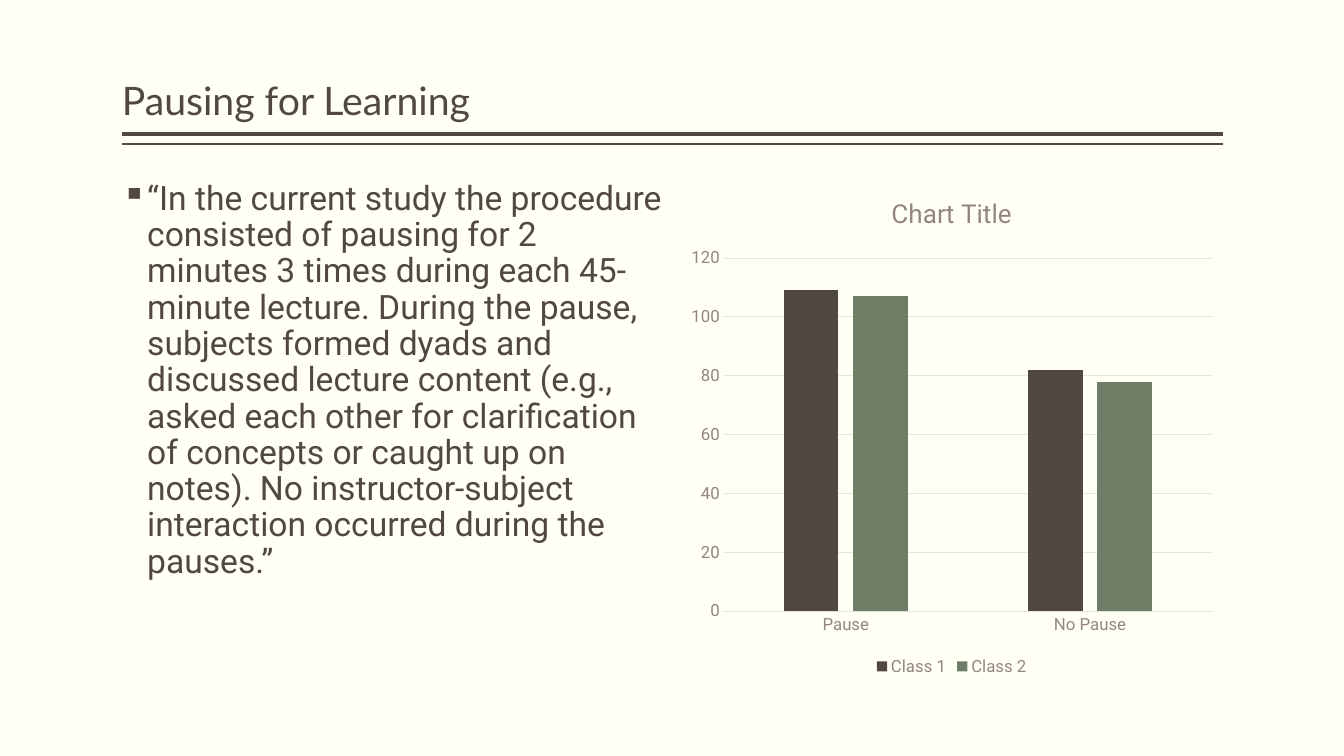
from lxml import etree
from pptx import Presentation
from pptx.chart.data import CategoryChartData
from pptx.dml.color import RGBColor
from pptx.enum.chart import XL_CHART_TYPE, XL_LEGEND_POSITION, XL_TICK_MARK
from pptx.enum.shapes import MSO_CONNECTOR
from pptx.enum.text import MSO_ANCHOR
from pptx.oxml.ns import qn
from pptx.util import Inches, Pt

COLUMNS = XL_CHART_TYPE.COLUMN_CLUSTERED
LEGEND_BOTTOM = XL_LEGEND_POSITION.BOTTOM
NO_TICK = XL_TICK_MARK.NONE
STRAIGHT = MSO_CONNECTOR.STRAIGHT
TOP, BOTTOM = MSO_ANCHOR.TOP, MSO_ANCHOR.BOTTOM

IVORY = RGBColor(0xFF, 0xFF, 0xF3)
BROWN = RGBColor(0x51, 0x48, 0x43)
GREEN = RGBColor(0x6D, 0x7D, 0x66)
TAUPE = RGBColor(0x94, 0x86, 0x7E)
PALE = RGBColor(0xE6, 0xE3, 0xE1)

# Content
TITLE = "Pausing for Learning"
QUOTE = (
    "“In the current study the procedure consisted of pausing for 2 minutes "
    "3 times during each 45-minute lecture. During the pause, subjects formed "
    "dyads and discussed lecture content (e.g., asked each other for "
    "clarification of concepts or caught up on notes). No instructor-subject "
    "interaction occurred during the pauses.”"
)
CHART_TITLE = "Chart Title"
CATEGORIES = ["Pause", "No Pause"]
SERIES = [("Class 1", (109, 82), BROWN), ("Class 2", (107, 78), GREEN)]
RULES = [(1.33, 3), (1.43, 1)]  # height on the page, line width

# Layout
LEFT, RIGHT = 1.21, 12.13
BODY_TOP, BODY_HEIGHT, COLUMN_WIDTH = 1.75, 5, 5.38


def set_font(font, name, size, color):
    font.name, font.size, font.bold = name, Pt(size), False
    font.color.rgb = color


def add_text(page, text, left, top, width, height, anchor, name, size):
    box = page.shapes.add_textbox(
        Inches(left), Inches(top), Inches(width), Inches(height))
    frame = box.text_frame
    frame.word_wrap = True
    frame.vertical_anchor = anchor
    frame.margin_left = frame.margin_right = 0
    frame.margin_top = frame.margin_bottom = Inches(0.05)
    para = frame.paragraphs[0]
    para.text = text
    para.line_spacing = 0.9
    set_font(para.font, name, size, BROWN)
    return para


def add_bullet(para, symbol, indent):
    properties = para._p.get_or_add_pPr()
    properties.set("marL", str(Inches(indent)))
    properties.set("indent", str(-Inches(indent)))
    bullet = etree.Element(qn("a:buChar"), char=symbol)
    properties.find(qn("a:defRPr")).addprevious(bullet)


def style_line(line, color, width):
    line.color.rgb = color
    line.width = Pt(width)


def add_pause_chart(page):
    data = CategoryChartData()
    data.categories = CATEGORIES
    for name, values, _ in SERIES:
        data.add_series(name, values)
    chart = page.shapes.add_chart(
        COLUMNS, Inches(RIGHT - COLUMN_WIDTH), Inches(BODY_TOP),
        Inches(COLUMN_WIDTH), Inches(BODY_HEIGHT), data).chart
    set_font(chart.font, "Roboto", 10, BROWN)

    chart.has_title = True
    heading = chart.chart_title.text_frame
    heading.text = CHART_TITLE
    set_font(heading.paragraphs[0].font, "Roboto", 18.6, TAUPE)
    chart.chart_title.include_in_layout = False

    chart.has_legend = True
    chart.legend.position = LEGEND_BOTTOM
    chart.legend.include_in_layout = False
    set_font(chart.legend.font, "Roboto", 12, TAUPE)

    for axis in (chart.category_axis, chart.value_axis):
        axis.major_tick_mark = axis.minor_tick_mark = NO_TICK
        set_font(axis.tick_labels.font, "Roboto", 12, TAUPE)
    style_line(chart.category_axis.format.line, PALE, 0.75)
    values = chart.value_axis
    values.format.line.fill.background()
    values.minimum_scale, values.maximum_scale, values.major_unit = 0, 120, 20
    style_line(values.major_gridlines.format.line, PALE, 0.75)

    plot = chart.plots[0]
    plot.vary_by_categories = False
    plot.gap_width, plot.overlap = 219, -27
    for series, (_, _, color) in zip(plot.series, SERIES):
        series.format.fill.solid()
        series.format.fill.fore_color.rgb = color


def main():
    deck = Presentation()
    deck.slide_width, deck.slide_height = Inches(13.33), Inches(7.5)
    page = deck.slides.add_slide(deck.slide_layouts[6])
    page.background.fill.solid()
    page.background.fill.fore_color.rgb = IVORY

    # Double rule under the title
    for y, width in RULES:
        rule = page.shapes.add_connector(
            STRAIGHT, Inches(LEFT), Inches(y), Inches(RIGHT), Inches(y))
        style_line(rule.line, BROWN, width)
        etree.SubElement(rule._element.spPr, qn("a:effectLst"))

    # Title and quotation
    add_text(page, TITLE, LEFT, 0.08, RIGHT - LEFT, 1.2, BOTTOM, "Lato", 28)
    quote = add_text(page, QUOTE, LEFT, BODY_TOP, COLUMN_WIDTH, BODY_HEIGHT,
                     TOP, "Roboto", 24)
    quote.space_before = Pt(18)
    add_bullet(quote, "▪", 0.25)

    add_pause_chart(page)
    deck.save("out.pptx")


if __name__ == "__main__":
    main()
